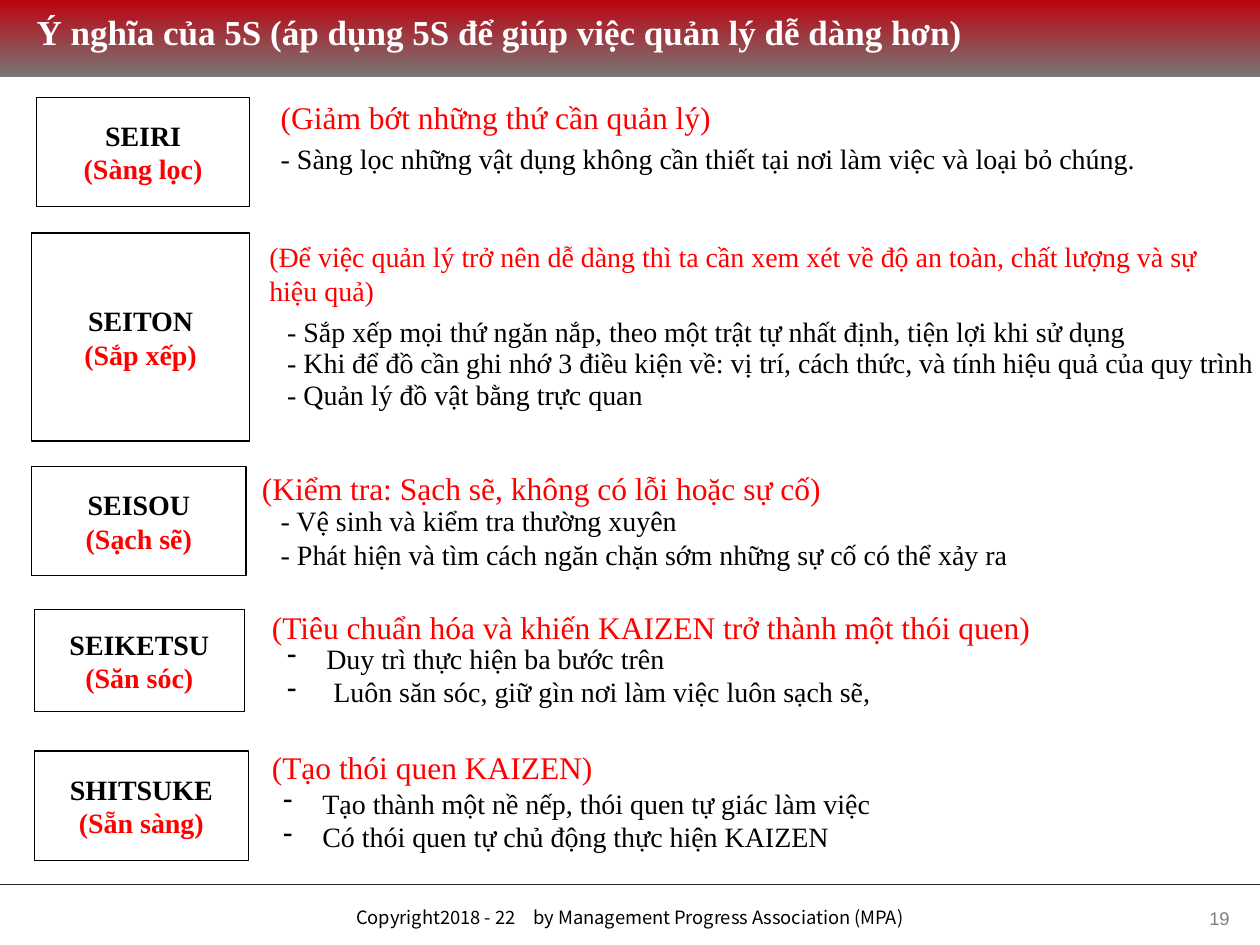
from dataclasses import dataclass
from lxml import etree
from pptx import Presentation, util as u
from pptx.dml.color import RGBColor
from pptx.enum import shapes, text
from pptx.oxml import ns


@dataclass(frozen=True)
class Theme:
    """Colours, fonts and type sizes."""
    black: str = "000000"
    red: str = "FF0000"
    white: str = "FFFFFF"
    grey: str = "808080"
    rule: str = "262626"
    top: str = "BC0411"
    base: str = "777777"
    serif: str = "Times New Roman"
    sans: str = "Arial"
    noto: str = "Noto Sans CJK JP"
    title: float = 20
    head: float = 18
    body: float = 16
    foot: float = 10.5


T = Theme()
WIDE = 25.4
PAD = (0.25, 0.13, 0.25, 0.13)

SECTIONS = [
    dict(box=(0.74, 1.96, 4.29, 2.21), name="SEIRI", gloss="(Sàng lọc)",
         head="(Giảm bớt những thứ cần quản lý)",
         items=["- Sàng lọc những vật dụng không cần thiết tại nơi làm việc và loại bỏ chúng."],
         hat=(4.67, -0.11, 12.4, 1.02), bat=(4.67, 0.76, 19.53, 0.94),
         fmt=dict(hang=0.51)),
    dict(box=(0.64, 4.7, 4.39, 4.19), name="SEITON", gloss="(Sắp xếp)",
         head="(Để việc quản lý trở nên dễ dàng thì ta cần xem xét về độ an toàn, "
              "chất lượng và sự hiệu quả)",
         items=["- Sắp xếp mọi thứ ngăn nắp, theo một trật tự nhất định, tiện lợi khi sử dụng",
                "- Khi để đồ cần ghi nhớ 3 điều kiện về: vị trí, cách thức, "
                "và tính hiệu quả của quy trình",
                "- Quản lý đồ vật bằng trực quan"],
         hat=(4.54, 0, 19.99, 1.63), bat=(4.9, 1.55, 20.17, 2.18),
         size=T.body, fmt=dict(lead=18)),
    dict(box=(0.64, 9.4, 4.32, 2.21), name="SEISOU", gloss="(Sạch sẽ)",
         head="(Kiểm tra: Sạch sẽ, không có lỗi hoặc sự cố)",
         items=["- Vệ sinh và kiểm tra thường xuyên",
                "- Phát hiện và tìm cách ngăn chặn sớm những sự cố có thể xảy ra"],
         hat=(4.39, -0.08, 17.65, 1.02), bat=(4.77, 0.63, 18.52, 1.63)),
    dict(box=(0.69, 12.29, 4.24, 2.06), name="SEIKETSU", gloss="(Săn sóc)",
         head="(Tiêu chuẩn hóa và khiến KAIZEN trở thành một thói quen)",
         items=["Duy trì thực hiện ba bước trên",
                " Luôn săn sóc, giữ gìn nơi làm việc luôn sạch sẽ,"],
         hat=(4.54, -0.17, 19.99, 1.02), bat=(4.85, 0.51, 19, 1.63),
         fmt=dict(hang=0.79, mark="-")),
    dict(box=(0.69, 15.14, 4.32, 2.21), name="SHITSUKE", gloss="(Sẵn sàng)",
         head="(Tạo thói quen KAIZEN)",
         items=["Tạo thành một nề nếp, thói quen tự giác làm việc",
                "Có thói quen tự chủ động thực hiện KAIZEN"],
         hat=(4.54, -0.2, 10.82, 1.02), bat=(4.77, 0.58, 19.69, 1.63),
         fmt=dict(hang=0.79, mark="-")),
]


def cm(box):
    """Turn a box of numbers into lengths."""
    return [u.Cm(n) for n in box]


def rgb(code):
    """Turn a hex code into a colour."""
    return RGBColor.from_string(code)


def write(shape, lines, size=T.body, font=T.serif, tints=(T.black,), bold=False,
          align=text.PP_ALIGN.LEFT, mid=False, pad=PAD, hang=0, lead=None, mark=None):
    """Fill a shape with one paragraph per line; tints cycle over the lines."""
    frame = shape.text_frame
    frame.word_wrap = True
    frame.vertical_anchor = text.MSO_ANCHOR.MIDDLE if mid else text.MSO_ANCHOR.TOP
    (frame.margin_left, frame.margin_top,
     frame.margin_right, frame.margin_bottom) = cm(pad)
    for i, line in enumerate(lines):
        para = frame.add_paragraph() if i else frame.paragraphs[0]
        para.alignment = align
        if lead:
            para.line_spacing = u.Pt(lead)
        if hang:
            props = para._p.get_or_add_pPr()
            props.set("marL", str(u.Cm(hang)))
            props.set("indent", str(-u.Cm(hang)))
            if mark:
                etree.SubElement(props, ns.qn("a:buChar")).set("char", mark)
        run = para.add_run()
        run.text = line
        run.font.size, run.font.name, run.font.bold = u.Pt(size), font, bold
        run.font.color.rgb = rgb(tints[i % len(tints)])


def label(slide, box, lines, **fmt):
    """Add a text box."""
    write(slide.shapes.add_textbox(*cm(box)), lines, **fmt)


def block(slide, box):
    """Add a plain rectangle without a shadow."""
    shape = slide.shapes.add_shape(shapes.MSO_SHAPE.RECTANGLE, *cm(box))
    shape.shadow.inherit = False
    return shape


def banner(slide, box, title):
    """Draw the shaded band with the slide title."""
    x, y, w, h = box
    band = block(slide, box)
    band.line.fill.background()
    band.fill.gradient()
    band.fill.gradient_angle = 270
    for stop, tint in zip(band.fill.gradient_stops, (T.top, T.base)):
        stop.color.rgb = rgb(tint)
    label(slide, (x + 0.74, y + 0.08, w - 3.02, h - 0.28), [title],
          size=T.title, tints=(T.white,), bold=True, pad=(0, 0.13, 0.25, 0.13))


def section(slide, box, name, gloss, head, items, hat, bat, size=T.head, fmt=None):
    """Draw one framed term with its heading and items, offset from the frame."""
    x, y = box[:2]
    frame = block(slide, box)
    frame.fill.background()
    frame.line.color.rgb = rgb(T.black)
    frame.line.width = u.Pt(0.75)
    write(frame, [name, gloss], tints=(T.black, T.red), bold=True,
          align=text.PP_ALIGN.CENTER, mid=True)
    label(slide, (x + hat[0], y + hat[1], *hat[2:]), [head], size=size, tints=(T.red,))
    label(slide, (x + bat[0], y + bat[1], *bat[2:]), items, **(fmt or {}))


def footer(slide, box, note, page):
    """Draw the rule, copyright line and page number."""
    x, y, w, h = box
    rule = slide.shapes.add_connector(shapes.MSO_CONNECTOR.STRAIGHT,
                                      *cm((x, y, x + w, y)))
    rule.line.color.rgb = rgb(T.rule)
    rule.line.width = u.Pt(0.75)
    etree.SubElement(rule._element.spPr, ns.qn("a:effectLst"))
    bare = dict(size=T.foot, mid=True, pad=(0, 0, 0, 0))
    label(slide, (x + 6.2, y + 0.43, 13, 0.46), [note], font=T.noto,
          align=text.PP_ALIGN.CENTER, **bare)
    label(slide, (x + w - 1.02, y + 0.53, 0.71, 0.3), [page], font=T.sans,
          tints=(T.grey,), **bare)


def main():
    """Build and save the slide."""
    deck = Presentation()
    deck.slide_width, deck.slide_height = cm((WIDE, 19.05))
    slide = deck.slides.add_slide(deck.slide_layouts[6])
    banner(slide, (0, 0, WIDE, 1.55),
           "Ý nghĩa của 5S (áp dụng 5S để giúp việc quản lý dễ dàng hơn)")
    for part in SECTIONS:
        section(slide, **part)
    footer(slide, (0, 17.83, WIDE, 1.22),
           "Copyright2018 - 22　by Management Progress Association (MPA)", "19")
    deck.save("out.pptx")


if __name__ == "__main__":
    main()
